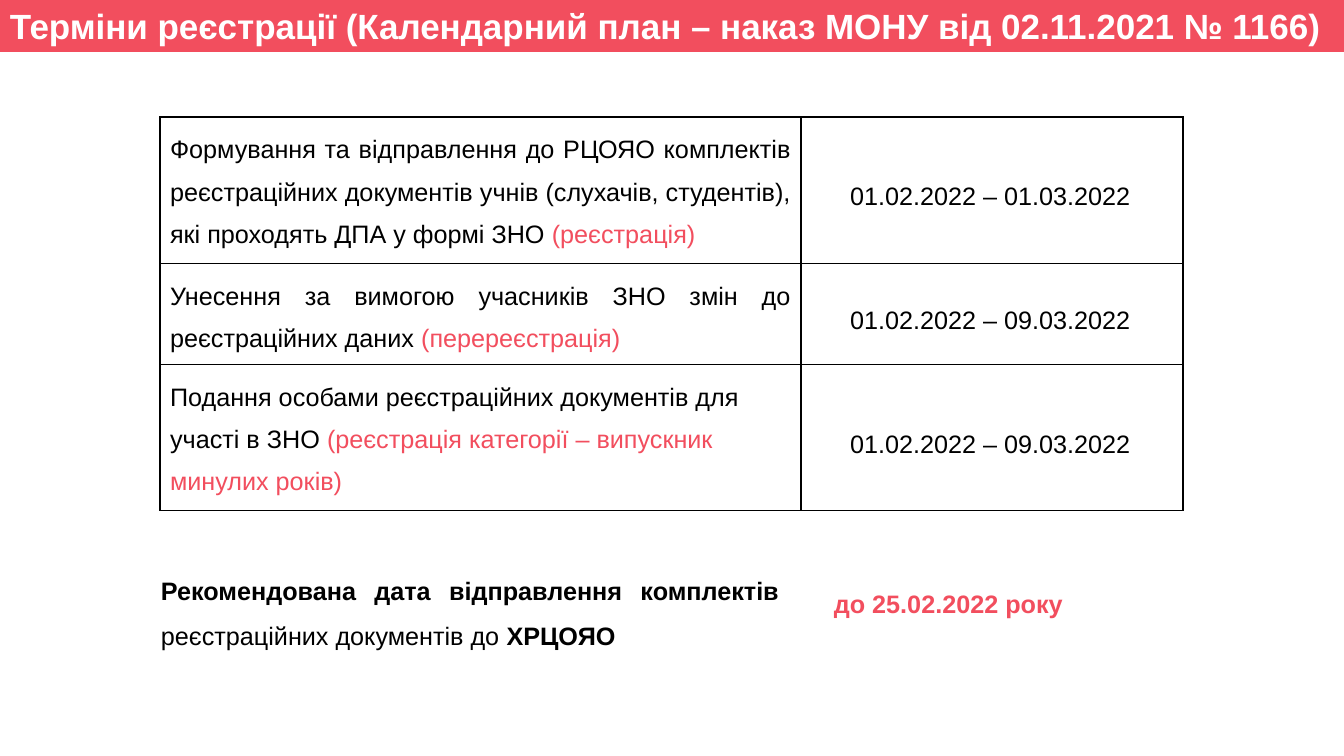
import dataclasses

import lxml.etree
import pptx
import pptx.dml.color
import pptx.enum.shapes
import pptx.enum.text
import pptx.oxml.ns
import pptx.util

ALIGN = pptx.enum.text.PP_ALIGN
ANCHOR = pptx.enum.text.MSO_ANCHOR
AUTO_SIZE = pptx.enum.text.MSO_AUTO_SIZE
EMU_PER_PX = 914400 / 100.8


@dataclasses.dataclass(frozen=True)
class Theme:
    font: str = "Arial"
    accent: str = "F24E5E"
    ink: str = "000000"
    paper: str = "FFFFFF"
    title_size: int = 25
    body_size: int = 18
    border_points: int = 1
    line_spacing: float = 1.5


def px(length):
    return pptx.util.Emu(round(length * EMU_PER_PX))


def rgb(colour):
    return pptx.dml.color.RGBColor.from_string(colour)


class SlideBuilder:
    def __init__(self, page, theme):
        self.page = page
        self.theme = theme

    def fill_para(self, frame, spans, size, align=ALIGN.LEFT, spacing=None, bold=None, indent=0):
        para = frame.paragraphs[0]
        para.alignment = align
        para.line_spacing = spacing
        if indent:
            properties = para._p.get_or_add_pPr()
            properties.set("marL", "0")
            properties.set("indent", str(px(indent)))
        para.font.name = self.theme.font
        para.font.size = pptx.util.Pt(size)
        para.font.bold = bold
        for text, colour, span_bold in spans:
            span = para.add_run()
            span.text = text
            span.font.color.rgb = rgb(colour)
            span.font.bold = span_bold

    def banner(self, text, width, height):
        box = self.page.shapes.add_shape(
            pptx.enum.shapes.MSO_SHAPE.RECTANGLE, 0, 0, px(width), px(height)
        )
        box.shadow.inherit = False
        box.fill.solid()
        box.fill.fore_color.rgb = rgb(self.theme.accent)
        box.line.fill.background()
        frame = box.text_frame
        frame.word_wrap = True
        frame.vertical_anchor = ANCHOR.TOP
        frame.auto_size = AUTO_SIZE.SHAPE_TO_FIT_TEXT
        self.fill_para(frame, [(text, self.theme.paper, None)], self.theme.title_size, bold=True)

    def text(self, spans, left, top, width, height, wrap=True, **style):
        box = self.page.shapes.add_textbox(px(left), px(top), px(width), px(height))
        frame = box.text_frame
        frame.word_wrap = wrap
        frame.auto_size = AUTO_SIZE.SHAPE_TO_FIT_TEXT
        self.fill_para(frame, spans, self.theme.body_size, ALIGN.JUSTIFY, **style)

    def outline(self, cell):
        properties = cell._tc.get_or_add_tcPr()
        qn = pptx.oxml.ns.qn
        for position, side in enumerate(("lnL", "lnR", "lnT", "lnB")):
            line = lxml.etree.Element(qn(f"a:{side}"))
            line.set("w", str(pptx.util.Pt(self.theme.border_points)))
            fill = lxml.etree.SubElement(line, qn("a:solidFill"))
            lxml.etree.SubElement(fill, qn("a:srgbClr")).set("val", self.theme.ink)
            properties.insert(position, line)

    def schedule(self, entries, left, top, column_widths, row_heights):
        theme = self.theme
        table = self.page.shapes.add_table(
            len(row_heights), len(column_widths), px(left), px(top),
            px(sum(column_widths)), px(sum(row_heights)),
        ).table
        table.first_row = False
        table.horz_banding = False
        for column, width in zip(table.columns, column_widths):
            column.width = px(width)
        for row, height, (task, kind, dates, align) in zip(table.rows, row_heights, entries):
            row.height = px(height)
            task_cell, date_cell = row.cells
            for cell in row.cells:
                cell.fill.background()
                self.outline(cell)
            date_cell.vertical_anchor = ANCHOR.MIDDLE
            self.fill_para(
                task_cell.text_frame, [(task, theme.ink, None), (kind, theme.accent, None)],
                theme.body_size, align, theme.line_spacing,
            )
            self.fill_para(
                date_cell.text_frame, [(dates, theme.ink, None)],
                theme.body_size, spacing=theme.line_spacing, indent=39,
            )


SCHEDULE = [
    (
        "Формування та відправлення до РЦОЯО комплектів реєстраційних документів "
        "учнів (слухачів, студентів), які проходять ДПА у формі ЗНО ",
        "(реєстрація)", "01.02.2022 – 01.03.2022", ALIGN.JUSTIFY,
    ),
    (
        "Унесення за вимогою учасників ЗНО змін до реєстраційних даних ",
        "(перереєстрація)", "01.02.2022 – 09.03.2022", ALIGN.JUSTIFY,
    ),
    (
        "Подання особами реєстраційних документів для участі в ЗНО ",
        "(реєстрація категорії – випускник минулих років)",
        "01.02.2022 – 09.03.2022", ALIGN.LEFT,
    ),
]


def main():
    theme = Theme()
    deck = pptx.Presentation()
    deck.slide_width, deck.slide_height = px(1344), px(756)
    builder = SlideBuilder(deck.slides.add_slide(deck.slide_layouts[6]), theme)
    builder.banner(
        "Терміни реєстрації (Календарний план – наказ МОНУ від 02.11.2021 № 1166)", 1344, 52
    )
    builder.schedule(SCHEDULE, 160, 117, (641, 382), (146, 101, 146))
    builder.text(
        [
            ("Рекомендована дата відправлення комплектів ", theme.ink, True),
            ("реєстраційних документів до ", theme.ink, False),
            ("ХРЦОЯО", theme.ink, True),
        ],
        151, 555, 638, 96, spacing=theme.line_spacing,
    )
    builder.text(
        [("до 25.02.2022 року", theme.accent, None)], 824, 583, 251, 40, wrap=False, bold=True
    )
    deck.save("out.pptx")


if __name__ == "__main__":
    main()
